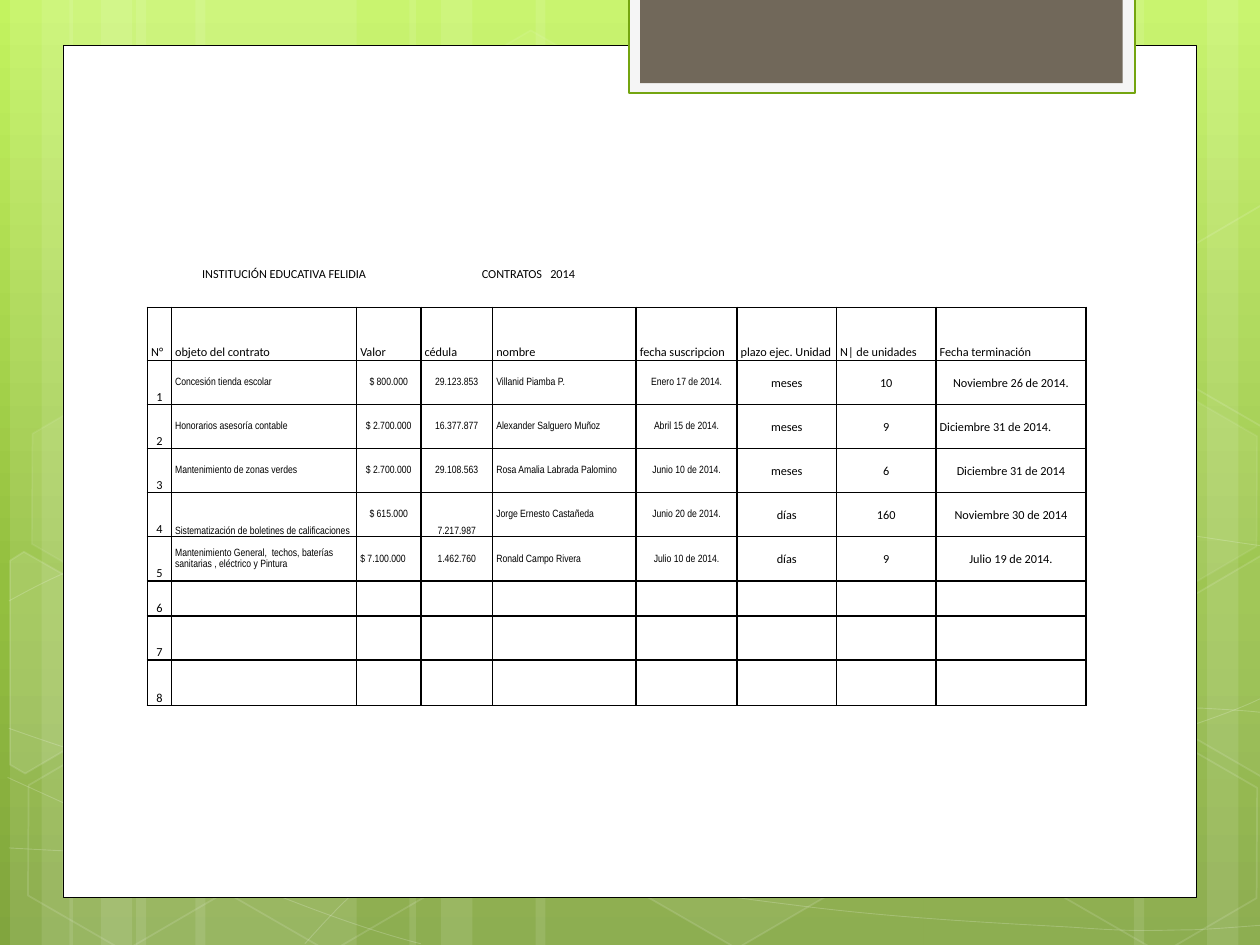
import copy

import lxml.etree
import pptx
import pptx.dml.color
import pptx.enum.shapes
import pptx.enum.text
import pptx.oxml.ns
import pptx.util

Inches, Pt, qn = pptx.util.Inches, pptx.util.Pt, pptx.oxml.ns.qn
MSO_SHAPE = pptx.enum.shapes.MSO_SHAPE
ANCHOR = pptx.enum.text.MSO_ANCHOR
ALIGN = pptx.enum.text.PP_ALIGN


def set_color(target, color, opacity=100):
    """Give a solid fill its hex colour and opacity in percent."""
    target.solid()
    target.fore_color.rgb = pptx.dml.color.RGBColor.from_string(color)
    if opacity < 100:
        rgb = target._xPr.find(".//" + qn("a:srgbClr"))
        lxml.etree.SubElement(rgb, qn("a:alpha"), val=str(opacity * 1000))


def paint(shape, fill=None, opacity=100, line=None, width=1, line_opacity=100):
    shape.shadow.inherit = False
    if fill:
        set_color(shape.fill, fill, opacity)
    else:
        shape.fill.background()
    if line:
        shape.line.width = Pt(width)
        set_color(shape.line.fill, line, line_opacity)
    else:
        shape.line.fill.background()


deck = pptx.Presentation()
deck.slide_width, deck.slide_height = Inches(10), Inches(7.5)
slide = deck.slides.add_slide(deck.slide_layouts[6])
shapes = slide.shapes

# Green gradient background
backdrop = slide.background.fill
backdrop.gradient()
backdrop.gradient_angle = 270
stop_list = slide._element.find(".//" + qn("a:gsLst"))
stop_list.insert(1, copy.deepcopy(stop_list[0]))
for stop, position, color in zip(backdrop.gradient_stops, (0, 0.62, 1),
                                 ("C3F35F", "93BF3F", "81A53E")):
    stop.position = position
    stop.color.rgb = pptx.dml.color.RGBColor.from_string(color)

# Translucent vertical bands
for left, width in [(1.08, 1.75), (0.08, 0.5), (0.33, 0.83), (1.55, 1.75),
                    (0.55, 0.5), (0.8, 0.83), (7.33, 1.75), (9.58, 0.5),
                    (9, 0.83), (4.25, 3.08), (3.25, 0.5), (3.5, 0.83)]:
    band = shapes.add_shape(MSO_SHAPE.RECTANGLE, Inches(left), 0, Inches(width), Inches(7.5))
    paint(band, "FFFFFF", 10)

# Thin waves: a start point, then three Bezier points for each stretch
waves = [
    [(0.07, 6.73), (0.61, 6.76), (1.15, 6.79), (1.9, 6.78), (2.65, 6.77), (3.58, 6.75),
     (4.58, 6.65), (5.58, 6.55), (7, 6.36), (7.92, 6.17), (8.83, 5.98), (9.77, 5.68),
     (10.07, 5.51)],
    [(0.07, 4.77), (0.36, 4.61), (0.65, 4.46), (1.21, 4.31), (1.78, 4.16), (2.59, 3.94),
     (3.47, 3.87), (4.36, 3.8), (5.44, 3.79), (6.54, 3.87), (7.64, 3.95), (9.47, 4.26),
     (10.07, 4.34)],
    [(0.06, 6.17), (1.27, 6.72), (2.47, 7.27), (3.34, 7.49)],
    [(0.07, 5.78), (0.38, 5.89), (0.7, 6), (1.28, 6.16), (1.86, 6.31), (2.73, 6.56),
     (3.57, 6.73), (4.4, 6.9), (5.45, 7.08), (6.28, 7.18), (7.11, 7.29), (8, 7.33),
     (8.53, 7.36), (9.05, 7.4), (9.19, 7.38), (9.45, 7.38), (9.71, 7.37), (9.89, 7.35),
     (10.07, 7.34)],
    [(2.42, 7.49), (2.6, 7.29), (2.78, 7.09), (3.02, 6.91), (3.26, 6.73), (3.6, 6.53),
     (3.88, 6.39), (4.16, 6.25), (4.33, 6.19), (4.7, 6.09), (5.06, 5.99), (5.73, 5.85),
     (6.08, 5.78), (6.44, 5.71), (6.49, 5.71), (6.8, 5.69), (7.11, 5.66), (7.6, 5.63),
     (7.94, 5.62), (8.29, 5.61), (8.86, 5.62), (8.86, 5.62), (9.08, 5.62), (9.3, 5.62),
     (9.53, 5.62), (9.71, 5.63), (9.88, 5.64), (9.97, 5.65), (10.06, 5.66), (10.03, 5.65),
     (10.06, 5.66)],
]
for wave in waves:
    outline = shapes.build_freeform(*map(Inches, wave[0]))
    outline.add_line_segments([(Inches(x), Inches(y)) for x, y in wave[1:]], close=False)
    wave_line = outline.convert_to_shape()
    paint(wave_line, line="FFFFFF", width=0.5, line_opacity=20)
    # Turn every three straight segments into one Bezier stretch
    segments = list(wave_line._element.iter(qn("a:lnTo")))
    for first in range(0, len(segments), 3):
        bezier = lxml.etree.Element(qn("a:cubicBezTo"))
        segments[first].addprevious(bezier)
        for segment in segments[first:first + 3]:
            bezier.append(segment[0])
            segment.getparent().remove(segment)

# Hexagons: left, top, fill opacity, line opacity
for left, top, opacity, line_opacity in [
        (3.34, 0.36, 4, 8), (4.97, 5.89, 6, 12), (0.11, 5.91, 0, 12),
        (0.14, 3.12, 7, 8), (1.74, 5.92, 0, 12), (7.53, 4.53, 10, 12),
        (8.34, 5.93, 0, 12), (8.34, 3.14, 7, 8)]:
    hexagon = shapes.add_shape(MSO_SHAPE.HEXAGON, Inches(left), Inches(top),
                               Inches(1.75), Inches(1.52))
    hexagon.adjustments[0] = 0.285
    hexagon.rotation = 30
    paint(hexagon, "FFFFFF" if opacity else None, opacity, "FFFFFF", 1, line_opacity)

# Hexagons cut by the slide edges
for opacity, corners in [
        (10, [(0.08, 4.45), (0.19, 4.38), (0.96, 4.82), (0.95, 5.7), (0.2, 6.14), (0.08, 6.07)]),
        (4, [(9.26, 4.85), (10.01, 4.41), (10.09, 4.46), (10.09, 6.13), (10.02, 6.17),
             (9.26, 5.73)]),
        (0, [(9.26, 2.07), (10.01, 1.63), (10.1, 1.68), (10.09, 3.35), (10.02, 3.39),
             (9.26, 2.95)])]:
    outline = shapes.build_freeform(*map(Inches, corners[0]))
    outline.add_line_segments([(Inches(x), Inches(y)) for x, y in corners[1:]])
    paint(outline.convert_to_shape(), "FFFFFF" if opacity else None, opacity, "FFFFFF", 1, 12)

# White page and the tab at its top
for box, fill, line, width in [((0.5, 0.36, 9, 6.76), "FFFFFF", "000000", 0.5),
                               ((4.99, -0.02, 4.02, 0.76), "F5F5F5", "74A510", 1.25),
                               ((5.08, -0.02, 3.83, 0.68), "71685A", None, 1)]:
    panel = shapes.add_shape(MSO_SHAPE.RECTANGLE, *map(Inches, box))
    paint(panel, fill, line=line, width=width)

# Contracts table
column_widths = [0.19, 1.47, 0.51, 0.57, 1.14, 0.8, 0.79, 0.79, 1.19]
row_heights = [0.21, 0.2, 0.42, 0.35, 0.35, 0.35, 0.35, 0.35, 0.28, 0.35, 0.36]
contracts = [
    ["INSTITUCIÓN EDUCATIVA FELIDIA", "", "", "CONTRATOS   2014"],
    [],
    ["N°", "objeto del contrato", "Valor", "cédula", "nombre", "fecha suscripcion",
     "plazo ejec. Unidad", "N| de unidades", "Fecha terminación"],
    ["1", "Concesión tienda escolar", "$ 800.000", "29.123.853", "Villanid Piamba P.",
     "Enero 17 de 2014.", "meses", "10", "Noviembre 26 de 2014."],
    ["2", "Honorarios asesoría contable", "$ 2.700.000", "16.377.877",
     "Alexander Salguero Muñoz", "Abril 15 de 2014.", "meses", "9", "Diciembre 31 de 2014."],
    ["3", "Mantenimiento de zonas verdes", "$ 2.700.000", "29.108.563",
     "Rosa Amalia Labrada Palomino", "Junio 10 de 2014.", "meses", "6", "Diciembre 31 de 2014"],
    ["4", "Sistematización de boletines de calificaciones", "$ 615.000", "7.217.987",
     "Jorge Ernesto Castañeda", "Junio 20 de 2014.", "días", "160", "Noviembre 30 de 2014"],
    ["5", "Mantenimiento General,  techos, baterías sanitarias , eléctrico y Pintura",
     "$ 7.100.000", "1.462.760", "Ronald Campo Rivera", "Julio 10 de 2014.", "días", "9",
     "Julio 19 de 2014."],
    ["6"], ["7"], ["8"],
]
HEADER = 2
left_aligned = {(4, 8), (7, 2)}
bottom_anchored = {(6, 1), (6, 3)}

table = shapes.add_table(len(row_heights), len(column_widths), Inches(1.17), Inches(2.03),
                         Inches(sum(column_widths)), Inches(sum(row_heights))).table
table.first_row = table.horz_banding = False
table._tbl.tblPr.find(qn("a:tableStyleId")).text = "{2D5ABB26-0587-4C30-8999-92F81FD0307C}"
for column, width in zip(table.columns, column_widths):
    column.width = Inches(width)
for row, height in zip(table.rows, row_heights):
    row.height = Inches(height)
table.cell(0, 0).merge(table.cell(0, 2))
table.cell(0, 3).merge(table.cell(0, 4))

for r, entries in enumerate(contracts):
    for c in range(len(column_widths)):
        cell = table.cell(r, c)
        cell.margin_left = cell.margin_right = Inches(0.03)
        cell.margin_top = cell.margin_bottom = 0
        at_bottom = r <= HEADER or c == 0 or (r, c) in bottom_anchored
        cell.vertical_anchor = ANCHOR.BOTTOM if at_bottom else ANCHOR.MIDDLE

        # Borders come before the fill in the cell properties
        sides = {0: (), 1: ("lnB",)}.get(r, ("lnL", "lnR", "lnT", "lnB"))
        for side in sides:
            border = lxml.etree.SubElement(cell._tc.get_or_add_tcPr(), qn("a:" + side), w="12700")
            ink = lxml.etree.SubElement(border, qn("a:solidFill"))
            lxml.etree.SubElement(ink, qn("a:srgbClr"), val="000000")
        cell.fill.background()

        paragraph = cell.text_frame.paragraphs[0]
        paragraph.line_spacing = 1.15
        to_left = r == HEADER or (r > HEADER and c in (1, 4)) or (r, c) in left_aligned
        paragraph.alignment = ALIGN.LEFT if to_left else ALIGN.CENTER
        if c < len(entries) and entries[c]:
            paragraph.text = entries[c]
            narrow = r > HEADER and 1 <= c <= 5
            font = paragraph.runs[0].font
            font.name = "Arial Narrow" if narrow else "Calibri"
            font.size = Pt(6 if narrow else 7)
            set_color(font.fill, "000000")
        else:
            lxml.etree.SubElement(paragraph._p, qn("a:endParaRPr"), sz="700")

deck.save("out.pptx")
